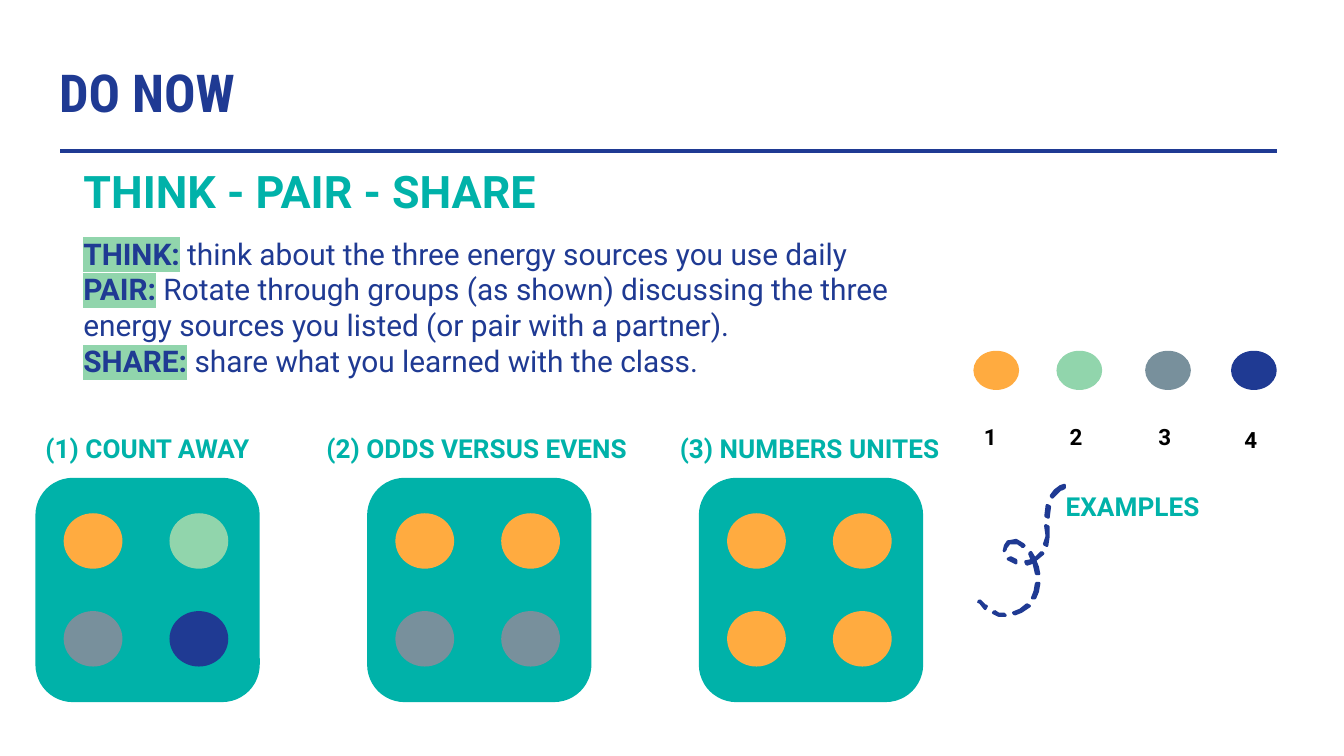
from lxml.etree import SubElement
from pptx import Presentation
from pptx.dml.color import RGBColor
from pptx.enum.shapes import MSO_CONNECTOR, MSO_SHAPE
from pptx.enum.text import MSO_ANCHOR, PP_ALIGN
from pptx.oxml.ns import qn
from pptx.util import Pt

NAVY = RGBColor(0x1F, 0x3A, 0x93)
TEAL = RGBColor(0x00, 0xB2, 0xA9)
GREEN = RGBColor(0x91, 0xD5, 0xAC)
GRAY = RGBColor(0x78, 0x90, 0x9C)
ORANGE = RGBColor(0xFF, 0xAB, 0x40)
BLACK = RGBColor(0, 0, 0)

INSTRUCTIONS = [
    ("THINK:", " think about the three energy sources you use daily"),
    ("PAIR:", " Rotate through groups (as shown) discussing the three energy "
              "sources you listed (or pair with a partner)."),
    ("SHARE:", " share what you learned with the class."),
]

# Label, label left, label width, and the four dots row by row
GROUPS = [
    ("(1) COUNT AWAY", 17.3, 124, [ORANGE, GREEN, GRAY, NAVY]),
    ("(2) ODDS VERSUS EVENS", 167.8, 178.6, [ORANGE, ORANGE, GRAY, GRAY]),
    ("(3) NUMBERS UNITES", 357.1, 208, [ORANGE] * 4),
]

# Dot colour, dot left, number left, number top
LEGEND = [
    (ORANGE, 1.5, 0, 31.7),
    (GREEN, 46, 46, 31.7),
    (GRAY, 93.5, 93.5, 31.7),
    (NAVY, 139.5, 139.5, 33.1),
]

# Outline of each dash of the curly line, counted in steps of DASH_STEP
DASH_STEP = Pt(0.72)
DASHES = [
    [(1, 86), (0, 87), (1, 87), (5, 92), (6, 90), (5, 90)],
    [(12, 94), (11, 95), (15, 97), (20, 97), (19, 96), (15, 96)],
    [(36, 89), (31, 93), (26, 95), (27, 96), (32, 94), (35, 92), (38, 90)],
    [(43, 73), (42, 79), (40, 84), (42, 84), (44, 79), (45, 73)],
    [(22, 42), (20, 45), (19, 49), (20, 48), (20, 47), (23, 43), (25, 43),
     (29, 43), (32, 45), (33, 46), (34, 45), (33, 44), (28, 41), (23, 42)],
    [(22, 55), (28, 58), (28, 56), (24, 54)],
    [(51, 15), (50, 23), (52, 24), (53, 16)],
    [(61, 1), (57, 4), (54, 8), (55, 9), (61, 3), (62, 3), (64, 2), (64, 0)],
    [(50, 30), (50, 31), (51, 38), (49, 44), (51, 45), (52, 38), (52, 31)],
    [(39, 50), (38, 51), (40, 56), (35, 57), (36, 59), (39, 58), (41, 57),
     (43, 66), (45, 66), (44, 61), (42, 56), (48, 51), (47, 50), (42, 55)],
]


def add_run(paragraph, text, size, color, font="Roboto", bold=True, highlight=None):
    run = paragraph.add_run()
    run.text = text
    run.font.size = Pt(size)
    run.font.bold = bold
    run.font.color.rgb = color
    if highlight is not None:
        mark = SubElement(run.font._element, qn("a:highlight"))
        SubElement(mark, qn("a:srgbClr")).set("val", str(highlight))
    run.font.name = font


def format_frame(shape):
    frame = shape.text_frame
    frame.word_wrap = True
    frame.vertical_anchor = MSO_ANCHOR.TOP
    frame.margin_left = frame.margin_right = Pt(7.2)
    frame.margin_top = frame.margin_bottom = Pt(7.2)
    frame.paragraphs[0].alignment = PP_ALIGN.LEFT
    return frame


def add_text(slide, box, text, **text_format):
    frame = format_frame(slide.shapes.add_textbox(*map(Pt, box)))
    add_run(frame.paragraphs[0], text, **text_format)


def add_filled(slide, kind, box, color):
    shape = slide.shapes.add_shape(kind, *map(Pt, box))
    shape.shadow.inherit = False
    shape.fill.solid()
    shape.fill.fore_color.rgb = color
    shape.line.fill.background()
    return shape


def add_header(slide, left, top, width, height):
    title = slide.shapes.title
    title.left, title.top = Pt(left), Pt(top)
    title.width, title.height = Pt(width), Pt(height)
    add_run(format_frame(title).paragraphs[0], "DO NOW", size=28, color=NAVY,
            font="Roboto Condensed")
    # Rule under the title
    rule_y = Pt(top + 55.6)
    rule = slide.shapes.add_connector(MSO_CONNECTOR.STRAIGHT, Pt(left + 7.9), rule_y,
                                      Pt(left + width - 11.5), rule_y)
    rule.line.color.rgb = NAVY
    rule.line.width = Pt(2.25)
    SubElement(rule._element.spPr, qn("a:effectLst"))


def add_instructions(slide, left, top, width, height):
    add_text(slide, (left, top, 337, 45.4), "THINK - PAIR - SHARE", size=24, color=TEAL)
    steps = slide.shapes.add_textbox(Pt(left), Pt(top + 38.2), Pt(width), Pt(height - 38.2))
    frame = format_frame(steps)
    for index, (keyword, explanation) in enumerate(INSTRUCTIONS):
        paragraph = frame.add_paragraph() if index else frame.paragraphs[0]
        add_run(paragraph, keyword, size=16, color=NAVY, highlight=GREEN)
        add_run(paragraph, explanation, size=16, color=NAVY, bold=False)


def add_group_card(slide, left, top, side, colors):
    card = add_filled(slide, MSO_SHAPE.ROUNDED_RECTANGLE, (left, top, side, side), TEAL)
    card.adjustments[0] = 0.167
    for index, color in enumerate(colors):
        row, column = divmod(index, 2)
        dot = (left + 15.1 + column * 56.7, top + 19 + row * 52.4, 31.5, 29.7)
        add_filled(slide, MSO_SHAPE.OVAL, dot, color)


def add_groups(slide, left, top, side, pitch):
    for index, (label, label_left, label_width, colors) in enumerate(GROUPS):
        add_text(slide, (label_left, top - 31.7, label_width, 31.7), label,
                 size=14, color=TEAL)
        add_group_card(slide, left + index * pitch, top, side, colors)


def add_legend(slide, left, top):
    for number, (color, dot_left, text_left, text_top) in enumerate(LEGEND, 1):
        add_filled(slide, MSO_SHAPE.OVAL, (left + dot_left, top, 24.5, 21), color)
        add_text(slide, (left + text_left, top + text_top, 24.5, 28.8), str(number),
                 size=12, color=BLACK)


def add_examples_pointer(slide, left, top):
    for start, *others in DASHES:
        builder = slide.shapes.build_freeform(*start, scale=DASH_STEP)
        builder.add_line_segments(others, close=True)
        dash = builder.convert_to_shape(Pt(left), Pt(top))
        dash.shadow.inherit = False
        dash.fill.solid()
        dash.fill.fore_color.rgb = NAVY
        dash.line.color.rgb = NAVY
        dash.line.width = Pt(1.5)
    add_text(slide, (left + 39.6, top - 4.3, 124, 31.7), "EXAMPLES", size=14, color=TEAL)


def main():
    presentation = Presentation()
    presentation.slide_width, presentation.slide_height = Pt(720), Pt(405)
    slide = presentation.slides.add_slide(presentation.slide_layouts[5])
    add_header(slide, 24.5, 25.2, 671, 45.4)
    add_instructions(slide, 37.6, 80.6, 491.8, 135.4)
    add_groups(slide, left=19, top=256, side=120.2, pitch=177.7)
    add_legend(slide, 520, 187.9)
    add_examples_pointer(slide, 524.2, 259.9)
    presentation.save("out.pptx")


if __name__ == "__main__":
    main()
